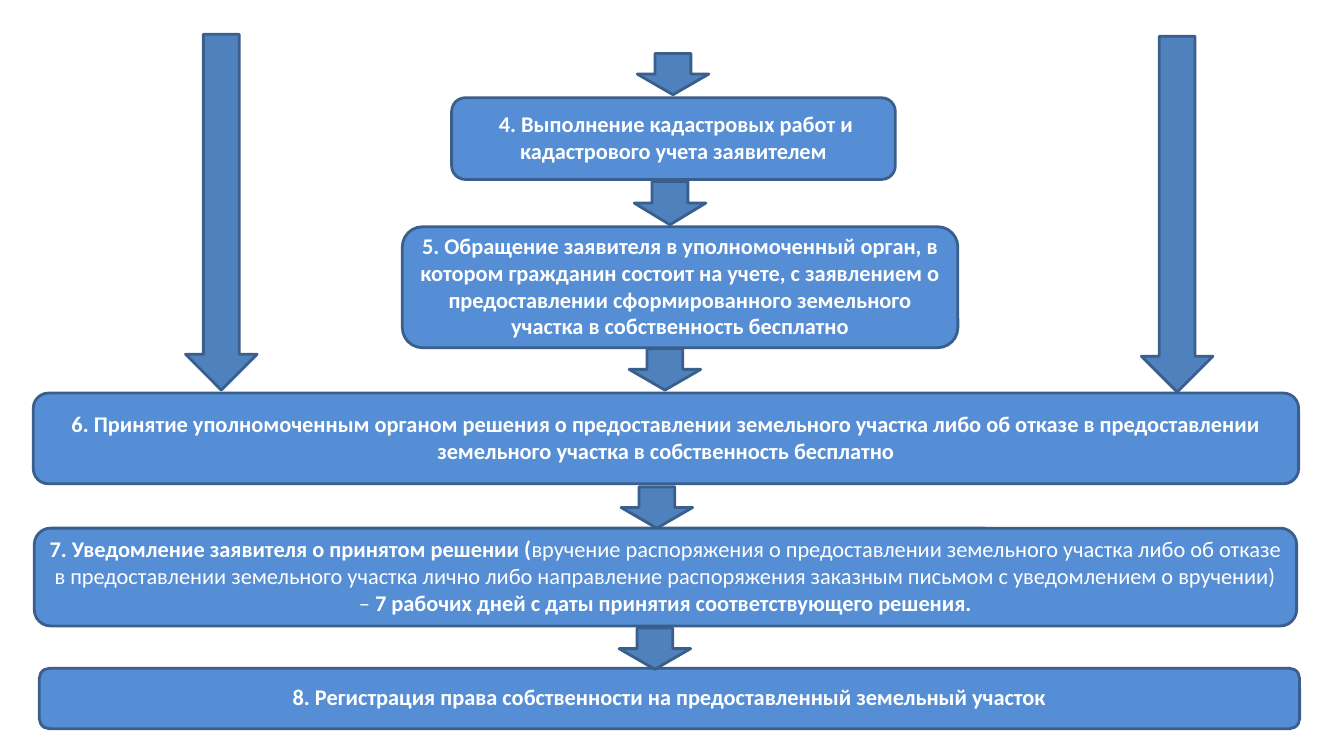
"""Flowchart slide: steps 4 to 8 of granting a land plot free of charge."""
from pptx import Presentation
from pptx.dml.color import RGBColor
from pptx.enum.shapes import MSO_SHAPE
from pptx.enum.text import MSO_ANCHOR, PP_ALIGN
from pptx.util import Inches, Pt

ROUND_RECT = MSO_SHAPE.ROUNDED_RECTANGLE
DOWN_ARROW = MSO_SHAPE.DOWN_ARROW
MIDDLE = MSO_ANCHOR.MIDDLE
CENTER = PP_ALIGN.CENTER

COLORS = {"step": "558ED5", "arrow": "4F81BD", "line": "3A5F8C", "text": "FFFFFF"}
ARROW_WIDTH = 0.71

STEPS = [
    (4.48, 0.97, 4.4, 0.81,
     [(" 4. Выполнение кадастровых работ и кадастрового учета заявителем", True)]),
    (3.99, 2.25, 5.51, 1.2,
     [("5. Обращение заявителя в уполномоченный орган, в котором гражданин состоит "
       "на учете, с заявлением о предоставлении сформированного земельного участка "
       "в собственность бесплатно", True)]),
    (0.33, 3.9, 12.55, 0.9,
     [("6. Принятие уполномоченным органом решения о предоставлении земельного участка "
       "либо об отказе в предоставлении земельного участка в собственность бесплатно", True)]),
    (0.34, 5.24, 12.52, 0.97,
     [("7. Уведомление заявителя о принятом решении (", True),
      ("вручение распоряжения о предоставлении земельного участка либо об отказе "
       "в предоставлении земельного участка лично либо направление распоряжения "
       "заказным письмом с уведомлением о вручении) – ", False),
      ("7 рабочих дней с даты принятия соответствующего решения.", True)]),
    (0.39, 6.63, 12.5, 0.6,
     [("8. Регистрация права собственности на предоставленный земельный участок", True)]),
]
ARROWS = [
    (1.84, 0.34, 3.53),
    (11.32, 0.36, 3.53),
    (6.32, 0.53, 0.41),
    (6.29, 1.8, 0.43),
    (6.24, 3.46, 0.41),
    (6.16, 4.83, 0.41),
    (6.14, 6.23, 0.41),
]


def add_block(kind, left, top, width, height, fill):
    sp = s.shapes.add_shape(kind, Inches(left), Inches(top), Inches(width), Inches(height))
    sp.shadow.inherit = False
    sp.fill.solid()
    sp.fill.fore_color.rgb = RGBColor.from_string(COLORS[fill])
    sp.line.color.rgb = RGBColor.from_string(COLORS["line"])
    sp.line.width = Pt(2)
    return sp


prs = Presentation()
prs.slide_width = Inches(13.33)
prs.slide_height = Inches(7.5)
s = prs.slides.add_slide(prs.slide_layouts[6])

for left, top, width, height, parts in STEPS:
    sp = add_block(ROUND_RECT, left, top, width, height, "step")
    tf = sp.text_frame
    tf.word_wrap = True
    tf.vertical_anchor = MIDDLE
    tf.margin_bottom = Inches(0.08)
    p = tf.paragraphs[0]
    p.alignment = CENTER
    for text, bold in parts:
        r = p.add_run()
        r.text = text
        r.font.name = "Calibri"
        r.font.size = Pt(16)
        r.font.bold = bold
        r.font.color.rgb = RGBColor.from_string(COLORS["text"])

for left, top, height in ARROWS:
    add_block(DOWN_ARROW, left, top, ARROW_WIDTH, height, "arrow")

prs.save("out.pptx")
